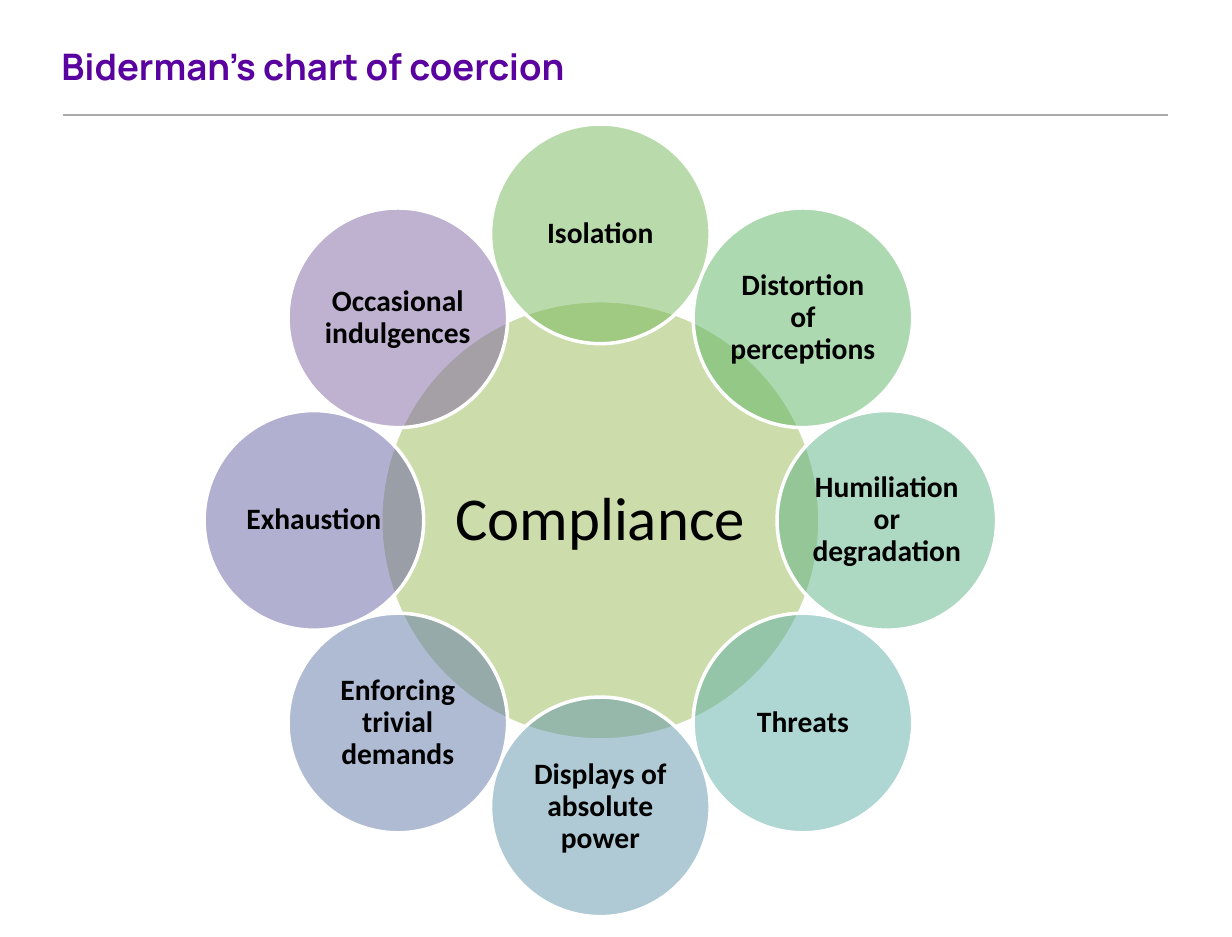
from math import cos, radians, sin

from lxml.etree import SubElement
from pptx import Presentation
from pptx.dml.color import RGBColor
from pptx.enum.shapes import MSO_CONNECTOR, MSO_SHAPE
from pptx.enum.text import MSO_ANCHOR, PP_ALIGN
from pptx.oxml.ns import qn
from pptx.util import Pt

TITLE = "Biderman’s chart of coercion"
HUB = ("Compliance", "9BBB59")
METHODS = [
    ("Isolation", "75B85A"),
    ("Distortion of perceptions", "5CB565"),
    ("Humiliation or degradation", "5DB287"),
    ("Threats", "5EAFA6"),
    ("Displays of absolute power", "6096AC"),
    ("Enforcing trivial demands", "6179A8"),
    ("Exhaustion", "6762A5"),
    ("Occasional indulgences", "8064A2"),
]
CENTER_X, CENTER_Y = 345.6, 299.5
RING_RADIUS = 164.9
HUB_SIZE = 252.8
METHOD_SIZE = HUB_SIZE / 2


def color(value):
    return RGBColor.from_string(value)


def set_margins(frame, margin):
    frame.margin_left = frame.margin_right = Pt(margin)
    frame.margin_top = frame.margin_bottom = Pt(margin)


def style_text(para, font_name, size, text_color, bold):
    for span in para.runs:
        span.font.name = font_name
        span.font.size = Pt(size)
        span.font.color.rgb = color(text_color)
        span.font.bold = bold


def add_circle(page, label, fill, x, y, diameter, size, margin, bold):
    circle = page.shapes.add_shape(
        MSO_SHAPE.OVAL, Pt(x - diameter / 2), Pt(y - diameter / 2), Pt(diameter), Pt(diameter))
    circle.shadow.inherit = False
    circle.fill.solid()
    circle.fill.fore_color.rgb = color(fill)
    fill_color = circle.fill._xPr.find(qn("a:solidFill"))[0]
    SubElement(fill_color, qn("a:alpha")).set("val", "50000")
    circle.line.color.rgb = color("FFFFFF")
    circle.line.width = Pt(2)
    frame = circle.text_frame
    frame.text = label
    frame.word_wrap = True
    frame.vertical_anchor = MSO_ANCHOR.MIDDLE
    set_margins(frame, margin)
    para = frame.paragraphs[0]
    para.alignment = PP_ALIGN.CENTER
    para.line_spacing = 0.9
    style_text(para, "Calibri", size, "000000", bold)


def add_heading(page):
    rule = page.shapes.add_connector(MSO_CONNECTOR.STRAIGHT, Pt(36), Pt(66.2), Pt(672.5), Pt(66.2))
    rule.line.color.rgb = color("AAAAAA")
    rule.line.width = Pt(0.75)
    SubElement(rule._element.spPr, qn("a:effectLst"))
    box = page.shapes.add_textbox(Pt(35.3), Pt(25.5), Pt(639), Pt(25.5))
    frame = box.text_frame
    frame.text = TITLE
    frame.word_wrap = True
    set_margins(frame, 0)
    style_text(frame.paragraphs[0], "Manrope", 21, "59029F", True)


def main():
    """Build the coercion wheel slide."""
    deck = Presentation()
    deck.slide_width, deck.slide_height = Pt(709.2), Pt(539.28)
    page = deck.slides.add_slide(deck.slide_layouts[6])
    add_heading(page)
    add_circle(page, *HUB, CENTER_X, CENTER_Y, HUB_SIZE, 35, 3.6, False)
    for index, (label, fill) in enumerate(METHODS):
        angle = radians(360 / len(METHODS) * index - 90)
        x = CENTER_X + RING_RADIUS * cos(angle)
        y = CENTER_Y + RING_RADIUS * sin(angle)
        add_circle(page, label, fill, x, y, METHOD_SIZE, 17, 1.44, True)
    deck.save("out.pptx")


if __name__ == "__main__":
    main()
